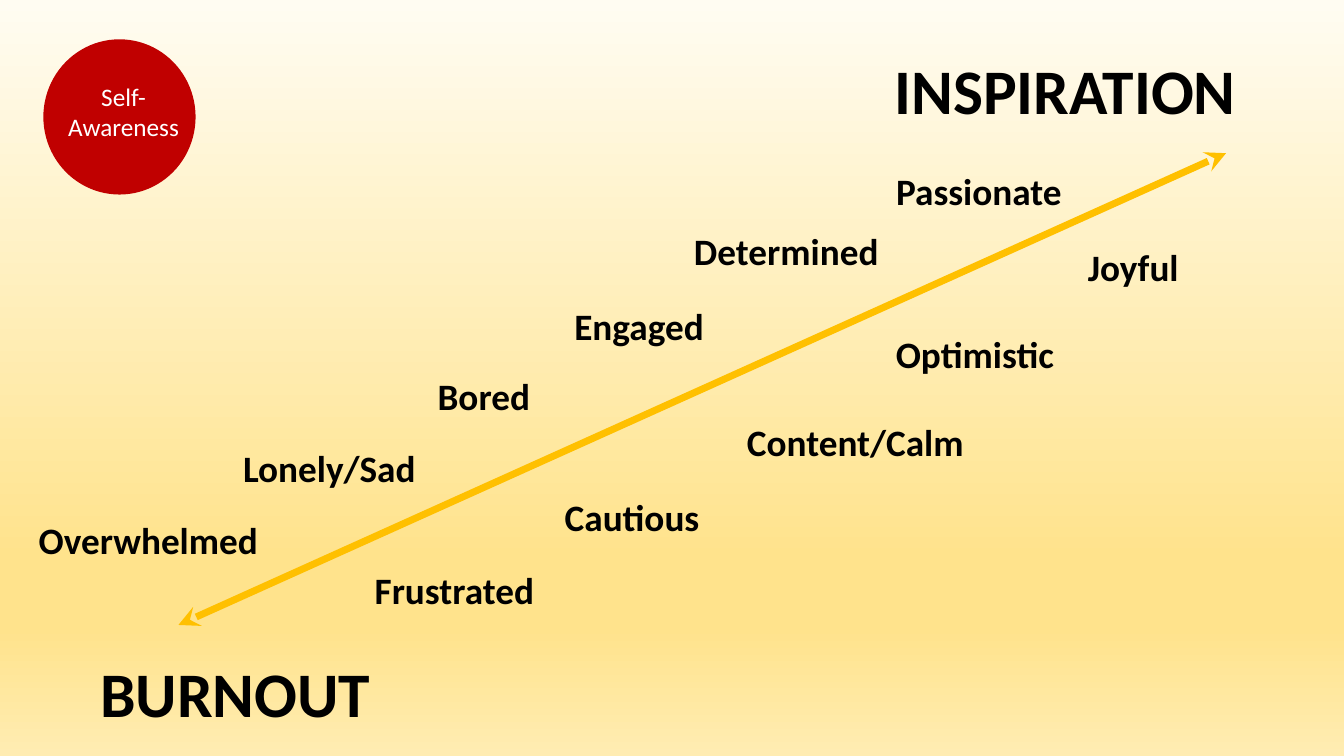
from dataclasses import dataclass

from lxml.etree import SubElement
from pptx import Presentation
from pptx.dml.color import RGBColor
from pptx.enum.shapes import MSO_CONNECTOR, MSO_SHAPE
from pptx.enum.text import MSO_ANCHOR, MSO_AUTO_SIZE, PP_ALIGN
from pptx.oxml.ns import qn
from pptx.slide import Slide
from pptx.text.text import TextFrame
from pptx.util import Inches, Pt

BLACK = RGBColor(0x00, 0x00, 0x00)
WHITE = RGBColor(0xFF, 0xFF, 0xFF)
RED = RGBColor(0xC0, 0x00, 0x00)
GOLD = RGBColor(0xFF, 0xC0, 0x00)
CREAM = RGBColor(0xFF, 0xFC, 0xF2)
YELLOW = RGBColor(0xFF, 0xE3, 0x8C)
PALE_YELLOW = RGBColor(0xFF, 0xEC, 0xB2)

BACKGROUND_STOPS = ((0, CREAM), (74, YELLOW), (83, YELLOW), (100, PALE_YELLOW))


@dataclass(frozen=True)
class Label:
    text: str
    left: float
    top: float
    width: float = 2.48
    height: float = 0.61
    size: float = 26.6
    spacing: float = 1.3
    anchor: MSO_ANCHOR = MSO_ANCHOR.TOP


EXTREMES = (
    Label("BURNOUT", 0.43, 6.3, 3.81, 1.03, 45.3, 1.15, MSO_ANCHOR.MIDDLE),
    Label("INSPIRATION", 8.01, 0.39, 5.11, 1.03, 45.3, 1.15),
)
FEELINGS = (
    Label("Frustrated ", 3.31, 5.49),
    Label("Overwhelmed ", 0.1, 5, width=2.83),
    Label("Lonely/Sad ", 2.07, 4.28),
    Label("Cautious", 5.03, 4.77),
    Label("Bored", 3.56, 3.57),
    Label("Determined", 6.56, 2.13, height=0.38),
    Label("Content/Calm", 6.97, 4.03, width=3.03),
    Label("Joyful", 10, 2.29),
    Label("Passionate", 8.47, 1.54),
    Label("Optimistic", 8.43, 3.15),
    Label("Engaged", 5.1, 2.88),
)


def paint_background(slide: Slide) -> None:
    fill = slide.background.fill
    fill.gradient()
    fill.gradient_angle = 270
    stop_list = next(slide.element.iter(qn("a:gsLst")))
    for stop in list(stop_list):
        stop_list.remove(stop)
    for percent, color in BACKGROUND_STOPS:
        stop = SubElement(stop_list, qn("a:gs"), pos=str(percent * 1000))
        SubElement(stop, qn("a:srgbClr"), val=str(color))


def write_centered(frame: TextFrame, text: str, size: float,
                   color: RGBColor, bold: bool, spacing: float) -> None:
    frame.word_wrap = True
    paragraph = frame.paragraphs[0]
    paragraph.alignment = PP_ALIGN.CENTER
    paragraph.line_spacing = spacing
    run = paragraph.add_run()
    run.text = text
    run.font.name = "Calibri"
    run.font.size = Pt(size)
    run.font.bold = bold
    run.font.color.rgb = color


def add_label(slide: Slide, label: Label) -> None:
    box = slide.shapes.add_textbox(Inches(label.left), Inches(label.top),
                                   Inches(label.width), Inches(label.height))
    frame = box.text_frame
    frame.margin_left = frame.margin_right = Inches(0)
    frame.margin_top = frame.margin_bottom = Inches(0)
    frame.vertical_anchor = label.anchor
    write_centered(frame, label.text, label.size, BLACK, True, label.spacing)


def add_mood_arrow(slide: Slide) -> None:
    arrow = slide.shapes.add_connector(MSO_CONNECTOR.STRAIGHT, Inches(1.77),
                                       Inches(6.2), Inches(12.16), Inches(1.52))
    arrow.line.color.rgb = GOLD
    arrow.line.width = Pt(5)
    properties = arrow.element.spPr
    outline = properties.find(qn("a:ln"))
    for end in ("a:headEnd", "a:tailEnd"):
        SubElement(outline, qn(end), type="stealth")
    SubElement(properties, qn("a:effectLst"))


def add_self_awareness_badge(slide: Slide) -> None:
    circle = slide.shapes.add_shape(MSO_SHAPE.OVAL, Inches(0.43), Inches(0.39),
                                    Inches(1.51), Inches(1.54))
    circle.shadow.inherit = False
    circle.fill.solid()
    circle.fill.fore_color.rgb = RED
    circle.line.fill.background()
    caption = slide.shapes.add_textbox(Inches(0.47), Inches(0.76),
                                       Inches(1.51), Inches(0.71))
    caption.text_frame.auto_size = MSO_AUTO_SIZE.SHAPE_TO_FIT_TEXT
    write_centered(caption.text_frame, "Self-Awareness", 18, WHITE, False, 1.0)


def main() -> None:
    presentation = Presentation()
    presentation.slide_width = Inches(13.33)
    presentation.slide_height = Inches(7.5)
    slide = presentation.slides.add_slide(presentation.slide_layouts[6])
    paint_background(slide)

    # Ends of the scale and the arrow between them
    for extreme in EXTREMES:
        add_label(slide, extreme)
    add_mood_arrow(slide)

    # Feelings along the arrow
    for feeling in FEELINGS:
        add_label(slide, feeling)

    # Topic badge
    add_self_awareness_badge(slide)
    presentation.save("out.pptx")


if __name__ == "__main__":
    main()
